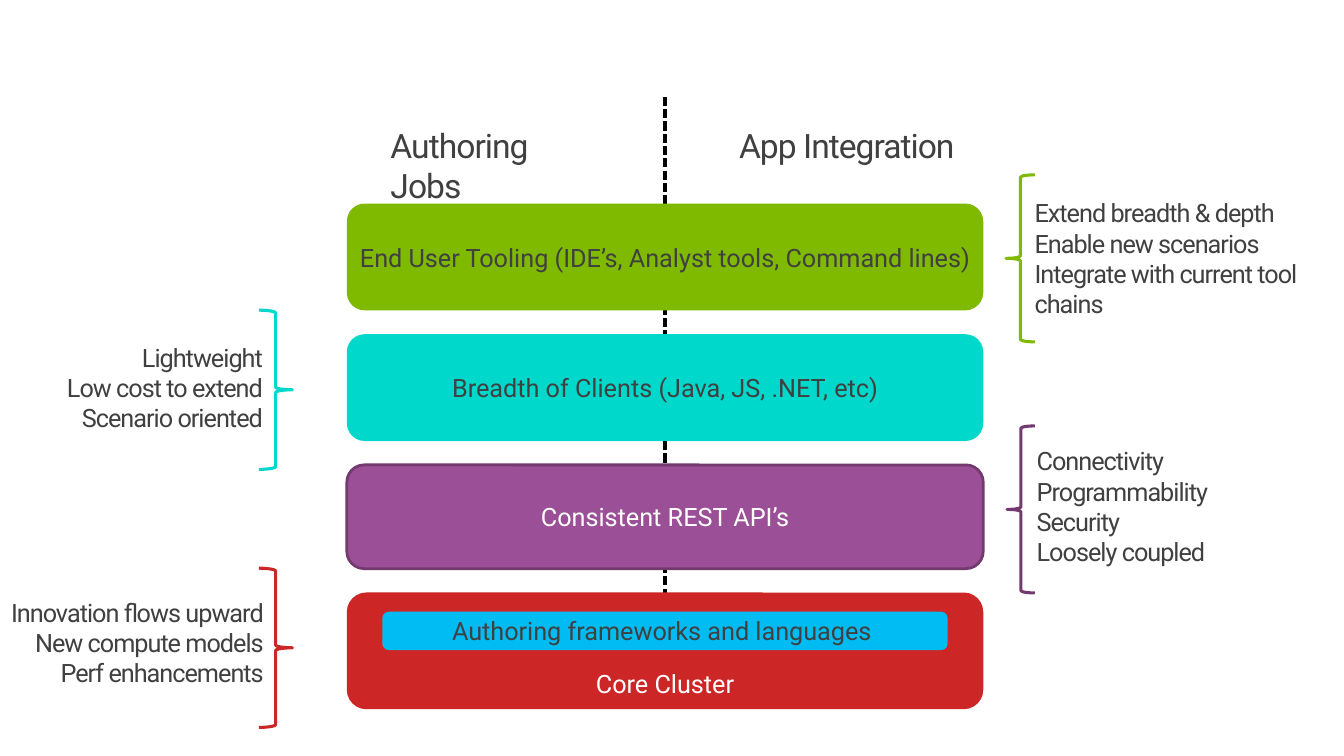
from pptx import Presentation
from pptx.dml.color import RGBColor
from pptx.enum.dml import MSO_LINE
from pptx.enum.shapes import MSO_CONNECTOR, MSO_SHAPE
from pptx.enum.text import MSO_ANCHOR, PP_ALIGN
from pptx.oxml.ns import qn
from pptx.util import Pt
from lxml.etree import SubElement

BLACK = RGBColor(0x00, 0x00, 0x00)
WHITE = RGBColor(0xFF, 0xFF, 0xFF)
GREY = RGBColor(0x40, 0x40, 0x40)
GREEN = RGBColor(0x7F, 0xBA, 0x00)
TEAL = RGBColor(0x00, 0xD8, 0xCC)
PURPLE = RGBColor(0x9B, 0x4F, 0x96)
DARK_PURPLE = RGBColor(0x73, 0x3A, 0x6F)
RED = RGBColor(0xCC, 0x26, 0x26)
BLUE = RGBColor(0x00, 0xBC, 0xF2)


def write(sp, lines, size, color, align, anchor, inset=0, spacing=0):
    tf = sp.text_frame
    tf.word_wrap = True
    tf.vertical_anchor = anchor
    tf.margin_left = tf.margin_right = Pt(inset)
    tf.margin_top = tf.margin_bottom = Pt(inset)
    for i, line in enumerate(lines):
        p = tf.add_paragraph() if i else tf.paragraphs[0]
        p.alignment = align
        r = p.add_run()
        r.text = line
        r.font.name = "Roboto"
        r.font.size = Pt(size)
        r.font.color.rgb = color
        if spacing:
            r.font._element.set("spc", str(spacing))


def add_bar(left, top, width, height, text, fill, color, anchor=MSO_ANCHOR.MIDDLE):
    sp = s.shapes.add_shape(MSO_SHAPE.ROUNDED_RECTANGLE, Pt(left), Pt(top), Pt(width), Pt(height))
    sp.shadow.inherit = False
    sp.fill.solid()
    sp.fill.fore_color.rgb = fill
    sp.line.fill.background()
    write(sp, [text], 18.4, color, PP_ALIGN.CENTER, anchor, inset=3.6)
    return sp


prs = Presentation()
prs.slide_width, prs.slide_height = Pt(979.2), Pt(550.8)
s = prs.slides.add_slide(prs.slide_layouts[6])

# Dashed divider between the two columns
divider = s.shapes.add_connector(MSO_CONNECTOR.STRAIGHT, Pt(484.5), Pt(70.5), Pt(484.5), Pt(432))
divider.line.color.rgb = BLACK
divider.line.width = Pt(2.25)
divider.line.dash_style = MSO_LINE.SQUARE_DOT
SubElement(divider._element.spPr, qn("a:effectLst"))

# Column headings
for left, width, heading in [(284.5, 148.3, "Authoring Jobs"), (538.5, 161.3, "App Integration")]:
    sp = s.shapes.add_textbox(Pt(left), Pt(90.7), Pt(width), Pt(30))
    write(sp, [heading], 24.5, GREY, PP_ALIGN.LEFT, MSO_ANCHOR.TOP, spacing=-70)

# Stack of layers, top to bottom
LEFT, WIDTH, GAP = 252.7, 463.7, 17.4
layers = [
    (77.8, "End User Tooling (IDE’s, Analyst tools, Command lines)", GREEN, GREY, MSO_ANCHOR.MIDDLE),
    (77.8, "Breadth of Clients (Java, JS, .NET, etc)", TEAL, GREY, MSO_ANCHOR.MIDDLE),
    (75.6, "Consistent REST API’s", PURPLE, WHITE, MSO_ANCHOR.MIDDLE),
    (85, "Core Cluster", RED, WHITE, MSO_ANCHOR.BOTTOM),
]
top = 148.3
for height, text, fill, color, anchor in layers:
    sp = add_bar(LEFT, top, WIDTH, height, text, fill, color, anchor)
    if fill == PURPLE:
        sp.line.color.rgb = DARK_PURPLE
        sp.line.width = Pt(2)
    top += height + GAP

# Frameworks bar inside the core layer
add_bar(278.6, 445.7, 411.8, 28, "Authoring frameworks and languages ", BLUE, GREY)

# Braces with notes: shape, colour, brace box, note box, alignment, lines
LB, RB = MSO_SHAPE.LEFT_BRACE, MSO_SHAPE.RIGHT_BRACE
notes = [
    (LB, GREEN, (733, 127.4, 20.9, 121.7), (753.8, 144, 211.7, 113.8), PP_ALIGN.LEFT,
     ["Extend breadth & depth", "Enable new scenarios", "Integrate with current tool chains"]),
    (RB, TEAL, (188.6, 226, 24.5, 116), (10, 249.1, 181.5, 90.7), PP_ALIGN.RIGHT,
     ["Lightweight", "Low cost to extend", "Scenario oriented"]),
    (LB, DARK_PURPLE, (733.7, 310.3, 20.2, 121.7), (755.3, 324.7, 161.3, 90.7), PP_ALIGN.LEFT,
     ["Connectivity", "Programmability", "Security", "Loosely coupled"]),
    (RB, RED, (188.6, 414, 24.5, 116), (0, 434.9, 192.2, 90.7), PP_ALIGN.RIGHT,
     ["Innovation flows upward", "New compute models", "Perf enhancements"]),
]
for kind, color, brace_box, note_box, align, lines in notes:
    brace = s.shapes.add_shape(kind, *[Pt(v) for v in brace_box])
    brace.shadow.inherit = False
    brace.fill.background()
    brace.line.color.rgb = color
    brace.line.width = Pt(2.25)
    sp = s.shapes.add_textbox(*[Pt(v) for v in note_box])
    write(sp, lines, 18.4, GREY, align, MSO_ANCHOR.TOP, spacing=-70)

prs.save("out.pptx")
